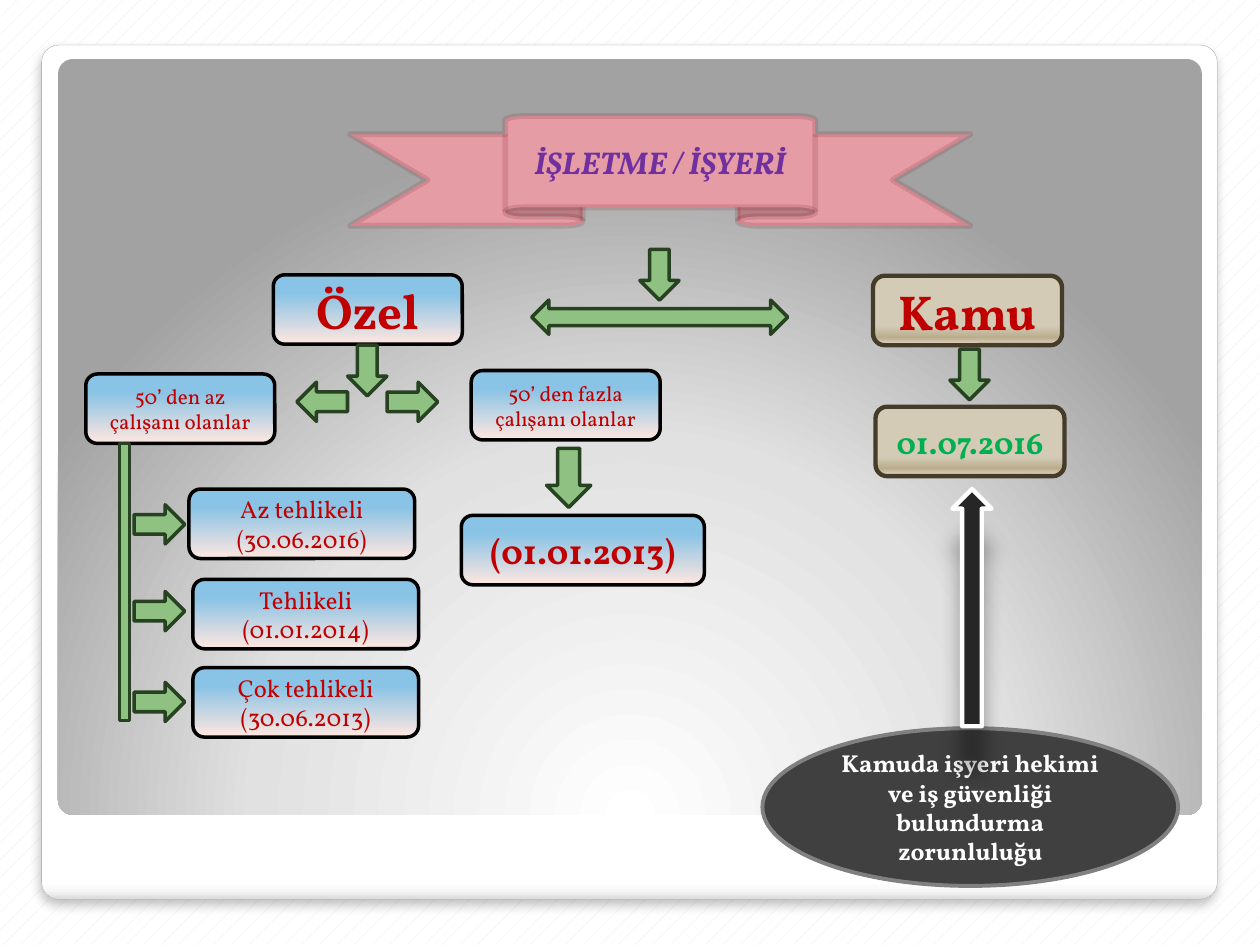
"""Build the slide that sorts workplaces by sector, size and hazard with their start dates."""
from dataclasses import dataclass

from lxml import etree
from pptx import Presentation
from pptx.dml.color import RGBColor
from pptx.enum.dml import MSO_PATTERN
from pptx.enum.shapes import MSO_SHAPE
from pptx.enum.text import MSO_ANCHOR, PP_ALIGN
from pptx.oxml.ns import qn
from pptx.util import Cm, Pt

ROUNDED = MSO_SHAPE.ROUNDED_RECTANGLE
DOWN = MSO_SHAPE.DOWN_ARROW
MIDDLE = MSO_ANCHOR.MIDDLE
CENTER = PP_ALIGN.CENTER


@dataclass(frozen=True)
class Theme:
    font: str = "Vollkorn"
    white: str = "FFFFFF"
    pattern: str = "EBEBEB"
    red: str = "C00000"
    purple: str = "7030A0"
    date_green: str = "00B050"
    green: str = "8EC182"
    green_line: str = "274221"
    pink: str = "E69CA4"
    pink_line: str = "771F28"
    oval: str = "404040"
    oval_line: str = "808080"
    dark: str = "262626"
    black: str = "000000"
    frame_line: str = "A4A4A4"
    brown: str = "443C29"
    frame: tuple = ((0, "FFFFFF"), (98, "FFFFFF"), (99, "F7F7F7"), (100, "DADADA"))
    panel: tuple = ((0, "FFFFFF"), (55, "E1E1E1"), (100, "A2A2A2"))
    blue: tuple = ((26, "89C3E5"), (100, "FFE7E0"))
    tan: tuple = ((72, "D3CBB6"), (89, "BAAD8D"), (100, "E9D8C9"))
    heading: int = 28
    date: int = 20
    title: int = 18
    body: int = 14
    small: int = 12


THEME = Theme()


def add_color(parent, color, alpha=None):
    element = etree.SubElement(parent, qn("a:srgbClr"), val=color)
    if alpha is not None:
        etree.SubElement(element, qn("a:alpha"), val=str(alpha * 1000))


def set_gradient(shape, stops, focus=None):
    shape.fill.gradient()
    gradient = shape._element.spPr.find(qn("a:gradFill"))
    for child in list(gradient):
        gradient.remove(child)
    stop_list = etree.SubElement(gradient, qn("a:gsLst"))
    for position, color in stops:
        stop = etree.SubElement(stop_list, qn("a:gs"), pos=str(position * 1000))
        add_color(stop, color)
    if focus is None:
        etree.SubElement(gradient, qn("a:lin"), ang="5400000", scaled="0")
    else:
        circle = etree.SubElement(gradient, qn("a:path"), {"path": "circle"})
        sides = {side: str(value * 1000) for side, value in zip("ltrb", focus)}
        etree.SubElement(circle, qn("a:fillToRect"), sides)


def add_shadow(shape, alpha, blur, distance):
    effects = shape._element.spPr.find(qn("a:effectLst"))
    shadow = etree.SubElement(effects, qn("a:outerShdw"), blurRad=str(Pt(blur)),
                              dist=str(Pt(distance)), dir="5400000", rotWithShape="0")
    add_color(shadow, THEME.black, alpha)


def add_figure(slide, kind, box, fill, line=None, width=2, focus=None):
    shape = slide.shapes.add_shape(kind, *(Cm(value) for value in box))
    shape.shadow.inherit = False
    if isinstance(fill, str):
        shape.fill.solid()
        shape.fill.fore_color.rgb = RGBColor.from_string(fill)
    else:
        set_gradient(shape, fill, focus)
    if line:
        shape.line.color.rgb = RGBColor.from_string(line)
        shape.line.width = Pt(width)
    else:
        shape.line.fill.background()
    return shape


def write(shape, text, size, color=THEME.red, bold=False, italic=False):
    frame = shape.text_frame
    frame.word_wrap = True
    frame.vertical_anchor = MIDDLE
    paragraph = frame.paragraphs[0]
    paragraph.text = text
    paragraph.alignment = CENTER
    font = paragraph.font
    font.name, font.size, font.bold, font.italic = THEME.font, Pt(size), bold, italic
    font.color.rgb = RGBColor.from_string(color)


def add_blue_node(slide, left, top, width, text, size, bold=False):
    shape = add_figure(slide, ROUNDED, (left, top, width, 1.4), THEME.blue, THEME.black)
    write(shape, text, size, bold=bold)


def add_tan_node(slide, left, top, text, size, color):
    shape = add_figure(slide, ROUNDED, (left, top, 3.81, 1.4), THEME.tan, THEME.brown, 2.5)
    write(shape, text, size, color, bold=True)


def add_green(slide, kind, left, top, width=0.79, height=1.02, rotation=0):
    shape = add_figure(slide, kind, (left, top, width, height), THEME.green, THEME.green_line)
    shape.rotation = rotation


def add_backdrop(slide):
    background = slide.background.fill
    background.patterned()
    background.pattern = MSO_PATTERN.PERCENT_5
    background.fore_color.rgb = RGBColor.from_string(THEME.pattern)
    background.back_color.rgb = RGBColor.from_string(THEME.white)
    frame = add_figure(slide, ROUNDED, (0.84, 0.91, 23.7, 17.22), THEME.frame,
                       THEME.frame_line, 0.16)
    add_shadow(frame, 25, 6, 4)
    panel = add_figure(slide, ROUNDED, (1.17, 1.19, 23.06, 15.24), THEME.panel,
                       focus=(50, 175, 50, -75))
    for shape in (frame, panel):
        shape.adjustments[0] = 0.02


def add_title(slide):
    ribbon = add_figure(slide, MSO_SHAPE.UP_RIBBON, (7.06, 2.34, 12.5, 2.21), THEME.pink,
                        THEME.pink_line, 3.35)
    line_color = ribbon.line._ln.find(".//" + qn("a:srgbClr"))
    etree.SubElement(line_color, qn("a:alpha"), val="16000")
    write(ribbon, "İŞLETME / İŞYERİ", THEME.title, THEME.purple, bold=True, italic=True)
    add_green(slide, DOWN, 12.9, 5.03)
    add_green(slide, MSO_SHAPE.LEFT_RIGHT_ARROW, 10.72, 6.05, 5.16, 0.69)


def add_private_branch(slide):
    add_blue_node(slide, 5.51, 5.54, 3.81, "Özel", THEME.heading, bold=True)
    add_green(slide, DOWN, 7.01, 6.96)
    add_green(slide, DOWN, 6.1, 7.59, rotation=90)
    add_green(slide, DOWN, 7.92, 7.59, rotation=270)
    add_blue_node(slide, 9.5, 7.47, 3.81, "50’ den fazla çalışanı olanlar", THEME.small)
    add_blue_node(slide, 1.73, 7.54, 3.81, "50’ den az çalışanı olanlar", THEME.small)
    add_green(slide, MSO_SHAPE.RECTANGLE, 2.41, 8.94, 0.2, 5.59)
    hazards = (
        (10.06, 3.81, 9.86, "Az tehlikeli (30.06.2016)"),
        (11.81, 3.89, 11.68, "Tehlikeli (01.01.2014)"),
        (13.64, 3.89, 13.46, "Çok tehlikeli (30.06.2013)"),
    )
    for arrow_top, left, top, text in hazards:
        add_green(slide, DOWN, 2.82, arrow_top, rotation=270)
        add_blue_node(slide, left, top, 4.55, text, THEME.body)
    add_blue_node(slide, 9.3, 10.39, 4.9, "(01.01.2013)", THEME.date, bold=True)
    add_green(slide, DOWN, 11.02, 9.04, 0.89, 1.19)


def add_public_branch(slide):
    add_tan_node(slide, 17.6, 5.56, "Kamu", THEME.heading, THEME.red)
    add_green(slide, DOWN, 19.15, 7.04)
    add_tan_node(slide, 17.65, 8.2, "01.07.2016", THEME.title, THEME.date_green)
    oval = add_figure(slide, MSO_SHAPE.OVAL, (15.37, 14.68, 8.38, 3.18), THEME.oval,
                      THEME.oval_line, 2.25)
    write(oval, "Kamuda işyeri hekimi ve iş güvenliği bulundurma zorunluluğu",
          THEME.body, THEME.white, bold=True)
    arrow = add_figure(slide, MSO_SHAPE.UP_ARROW, (19.2, 9.86, 0.79, 4.78), THEME.dark,
                       THEME.white, 2.5)
    add_shadow(arrow, 35, 12, 25)


def main():
    presentation = Presentation()
    presentation.slide_width, presentation.slide_height = Cm(25.4), Cm(19.05)
    slide = presentation.slides.add_slide(presentation.slide_layouts[6])
    add_backdrop(slide)
    add_title(slide)
    add_private_branch(slide)
    add_public_branch(slide)
    presentation.save("out.pptx")


if __name__ == "__main__":
    main()
